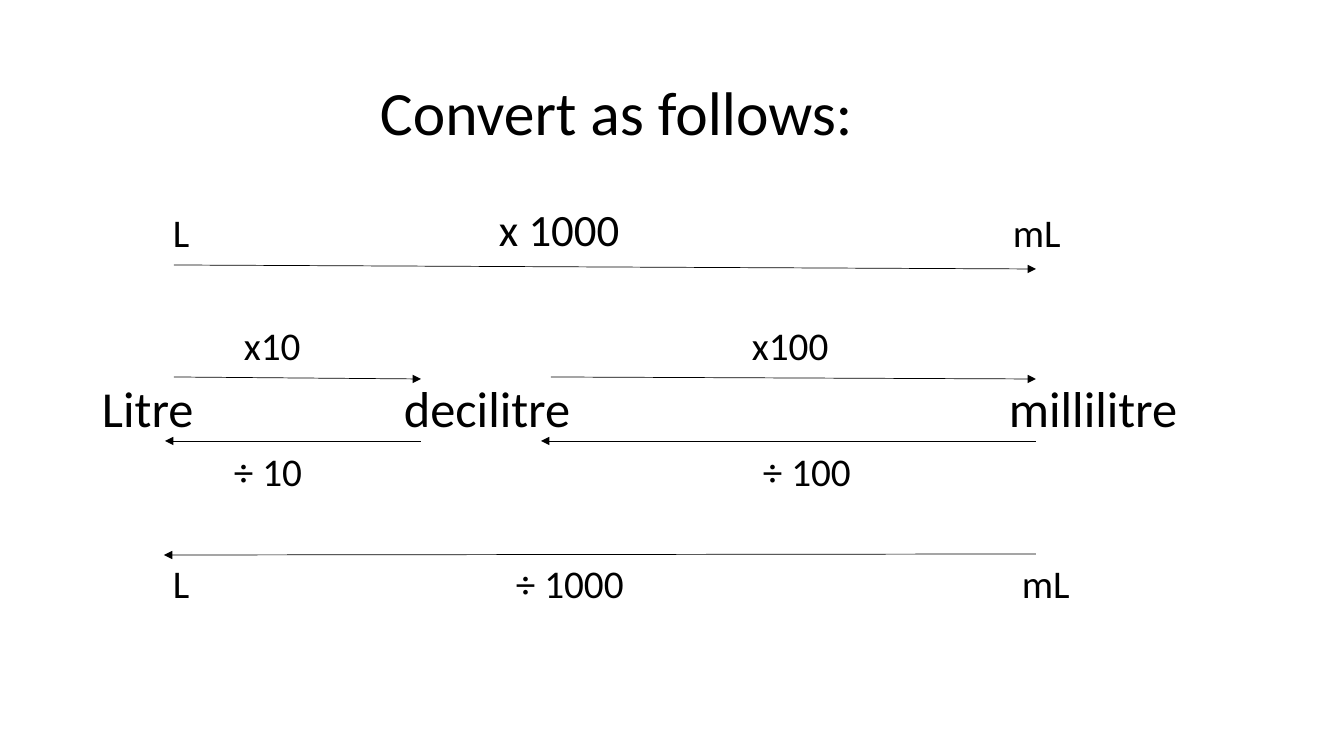
from dataclasses import dataclass

from lxml import etree
from pptx import Presentation
from pptx.dml.color import RGBColor
from pptx.enum.shapes import MSO_CONNECTOR
from pptx.enum.text import MSO_ANCHOR
from pptx.oxml.ns import qn
from pptx.util import Emu, Pt

STRAIGHT = MSO_CONNECTOR.STRAIGHT
TOP = MSO_ANCHOR.TOP
PX_PER_INCH = 100.8
PX_PER_PT = PX_PER_INCH / 72


@dataclass(frozen=True)
class Theme:
    font: str = "Calibri"
    ink: RGBColor = RGBColor(0, 0, 0)
    title: int = 44
    unit: int = 36
    main_factor: int = 32
    label: int = 28
    line: float = 0.5
    ascent: float = 0.95
    line_height: float = 1.22


THEME = Theme()

# text, left, baseline, width, type size
LABELS = [
    ("Convert as follows:", 380, 133, 480, THEME.title),
    ("L", 173, 245, 20, THEME.label),
    ("x 1000", 499, 245, 124, THEME.main_factor),
    ("mL", 1013, 245, 54, THEME.label),
    ("x10", 244, 358, 60, THEME.label),
    ("x100", 752, 358, 80, THEME.label),
    ("Litre", 102, 425, 94, THEME.unit),
    ("decilitre", 404, 425, 170, THEME.unit),
    ("millilitre", 1009, 425, 172, THEME.unit),
    ("÷ 10", 234, 484, 72, THEME.label),
    ("÷ 100", 763, 484, 92, THEME.label),
    ("L", 173, 596, 20, THEME.label),
    ("÷ 1000", 516, 596, 112, THEME.label),
    ("mL", 1022, 596, 54, THEME.label),
]

# start x, start y, end x, end y
ARROWS = [
    (174, 265, 1036, 269),
    (174, 377, 421, 379),
    (551, 377, 1036, 379),
    (421, 441, 165, 441),
    (1036, 441, 541, 441),
    (1036, 554, 164, 555),
]


def px(n):
    return Emu(round(n * 914400 / PX_PER_INCH))


def add_label(slide, text, left, baseline, width, size):
    """Place one line of text so that it stands on the given baseline."""
    em = size * PX_PER_PT
    top = round(baseline - THEME.ascent * em)
    height = round(THEME.line_height * em)
    tf = slide.shapes.add_textbox(px(left), px(top), px(width), px(height)).text_frame
    tf.margin_left = tf.margin_right = tf.margin_top = tf.margin_bottom = 0
    tf.vertical_anchor = TOP
    tf.word_wrap = False
    tf.text = text
    font = tf.paragraphs[0].runs[0].font
    font.name = THEME.font
    font.size = Pt(size)
    font.color.rgb = THEME.ink


def add_arrow(slide, x1, y1, x2, y2):
    arrow = slide.shapes.add_connector(STRAIGHT, px(x1), px(y1), px(x2), px(y2))
    arrow.line.color.rgb = THEME.ink
    arrow.line.width = Pt(THEME.line)
    sp_pr = arrow.line._get_or_add_ln().getparent()
    etree.SubElement(sp_pr.find(qn("a:ln")), qn("a:tailEnd"), type="triangle")
    etree.SubElement(sp_pr, qn("a:effectLst"))


def main():
    prs = Presentation()
    prs.slide_width, prs.slide_height = px(1344), px(756)
    slide = prs.slides.add_slide(prs.slide_layouts[6])
    for label in LABELS:
        add_label(slide, *label)
    for arrow in ARROWS:
        add_arrow(slide, *arrow)
    prs.save("out.pptx")


if __name__ == "__main__":
    main()
